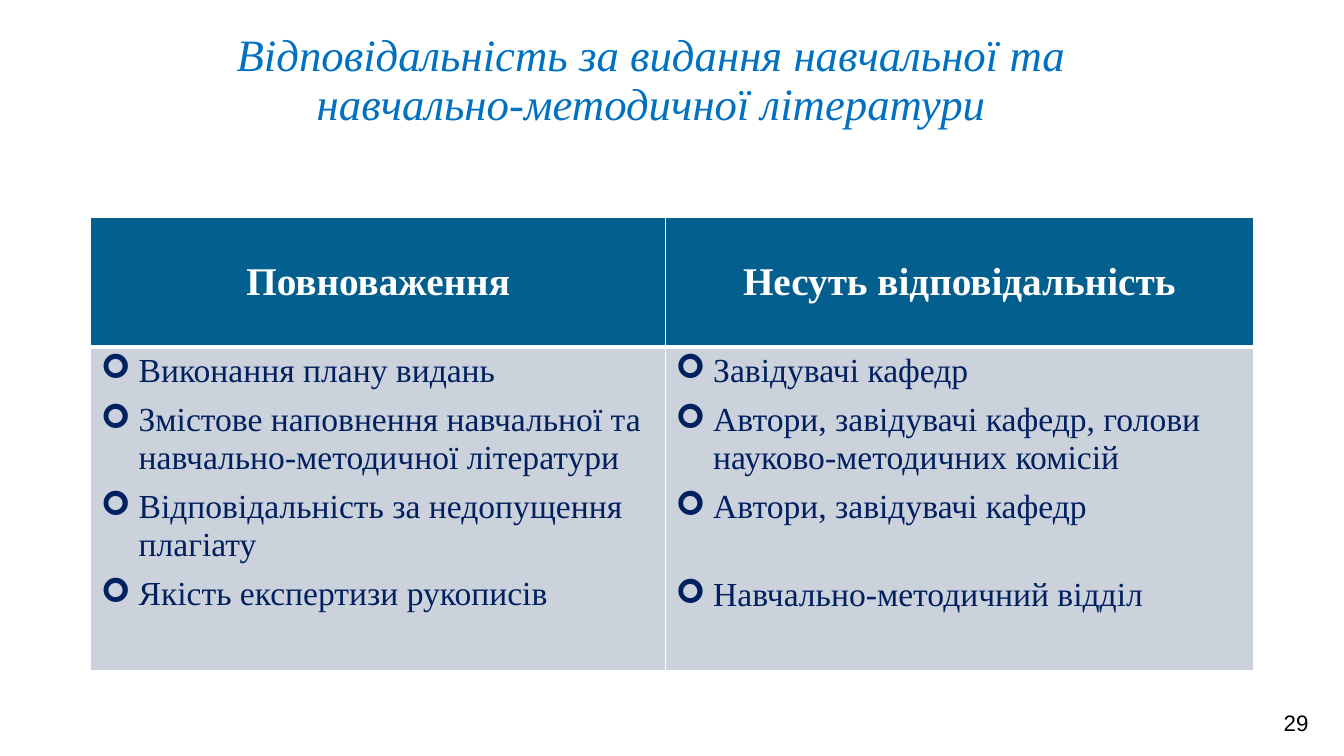
from dataclasses import dataclass

from lxml import etree
from pptx import Presentation
from pptx import util as u
from pptx.dml.color import RGBColor
from pptx.enum import text
from pptx.oxml.ns import qn


@dataclass(frozen=True)
class Theme:
    serif: str = "Times New Roman"
    sans: str = "Arial"
    title: str = "0070C0"
    header: str = "035F8E"
    body: str = "CCD2DB"
    ink: str = "002060"
    white: str = "FFFFFF"
    black: str = "000000"
    title_size: int = 32
    header_size: int = 28
    body_size: int = 24
    number_size: int = 16
    item_gap: int = 9
    line_gap: int = 27


THEME = Theme()
TITLE = "Відповідальність за видання навчальної та\vнавчально-методичної літератури"
HEADERS = ["Повноваження", "Несуть відповідальність"]
# Each item: text and the number of free lines left above it.
DUTIES = [
    ("Виконання плану видань", 0),
    ("Змістове наповнення навчальної та навчально-методичної літератури", 0),
    ("Відповідальність за недопущення плагіату", 0),
    ("Якість експертизи рукописів", 0),
]
HOLDERS = [
    ("Завідувачі кафедр", 0),
    ("Автори, завідувачі кафедр, голови науково-методичних комісій", 0),
    ("Автори, завідувачі кафедр", 0),
    ("Навчально-методичний відділ", 1),
]


def style(para, color, **formats):
    for name, value in formats.items():
        setattr(para.font, name, value)
    para.font.color.rgb = RGBColor.from_string(color)


def add_line(page, box, words, color, spacing=1.0, **formats):
    """Place one centred paragraph in a text box."""
    frame = page.shapes.add_textbox(*map(u.Cm, box)).text_frame
    frame.word_wrap = True
    para = frame.paragraphs[0]
    para.text = words
    para.alignment = text.PP_ALIGN.CENTER
    para.line_spacing = spacing
    style(para, color, **formats)


def add_bullet(para):
    props = para._p.get_or_add_pPr()
    indent = u.Cm(0.95)
    props.set("marL", str(indent))
    props.set("indent", str(-indent))
    etree.SubElement(props, qn("a:buFont"), typeface="Wingdings")
    etree.SubElement(props, qn("a:buChar"), char="➢")


def paint_cell(cell, fill, **widths):
    """Fill a cell and draw its white borders, widths in points."""
    props = cell._tc.get_or_add_tcPr()
    for side in ("L", "R", "T", "B"):
        line = etree.SubElement(props, qn(f"a:ln{side}"), w=str(u.Pt(widths.get(side, 1))))
        solid = etree.SubElement(line, qn("a:solidFill"))
        etree.SubElement(solid, qn("a:srgbClr"), val=THEME.white)
    cell.fill.solid()
    cell.fill.fore_color.rgb = RGBColor.from_string(fill)


def fill_header(cell, words):
    paint_cell(cell, THEME.header, B=3)
    cell.vertical_anchor = text.MSO_ANCHOR.MIDDLE
    para = cell.text_frame.paragraphs[0]
    para.text = words
    para.alignment = text.PP_ALIGN.CENTER
    style(para, THEME.white, name=THEME.serif, size=u.Pt(THEME.header_size), bold=True)


def fill_list(cell, items):
    paint_cell(cell, THEME.body, T=3)
    frame = cell.text_frame
    for index, (words, free_lines) in enumerate(items):
        para = frame.add_paragraph() if index else frame.paragraphs[0]
        para.text = words
        if index:
            para.space_before = u.Pt(THEME.item_gap + free_lines * THEME.line_gap)
        add_bullet(para)
        style(para, THEME.ink, name=THEME.serif, size=u.Pt(THEME.body_size), bold=False)


def add_duty_table(page, box, widths, heights):
    table = page.shapes.add_table(2, 2, *map(u.Cm, box)).table
    for row, height in zip(table.rows, heights):
        row.height = u.Cm(height)
    for index, (width, header, items) in enumerate(zip(widths, HEADERS, (DUTIES, HOLDERS))):
        table.columns[index].width = u.Cm(width)
        fill_header(table.cell(0, index), header)
        fill_list(table.cell(1, index), items)


def main():
    deck = Presentation()
    deck.slide_width, deck.slide_height = u.Cm(33.87), u.Cm(19.05)
    page = deck.slides.add_slide(deck.slide_layouts[6])
    add_line(page, (1.9, 0.71, 29.03, 2.49), TITLE, THEME.title, spacing=0.9,
             name=THEME.serif, size=u.Pt(THEME.title_size), italic=True)
    add_duty_table(page, (2.29, 5.49, 29.29, 11.42), (14.48, 14.81), (3.26, 8.16))
    add_line(page, (31.85, 17.75, 1.63, 0.94), "29", THEME.black,
             name=THEME.sans, size=u.Pt(THEME.number_size))
    deck.save("out.pptx")


if __name__ == "__main__":
    main()
